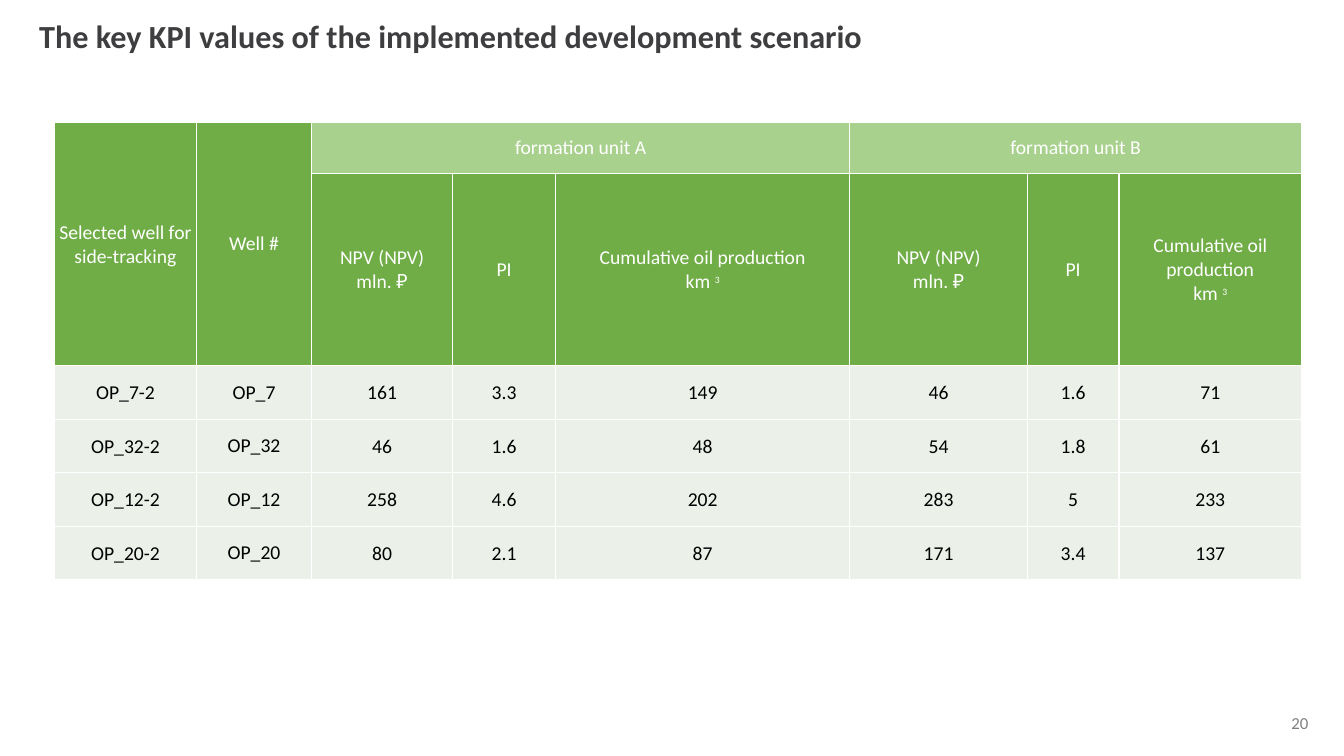
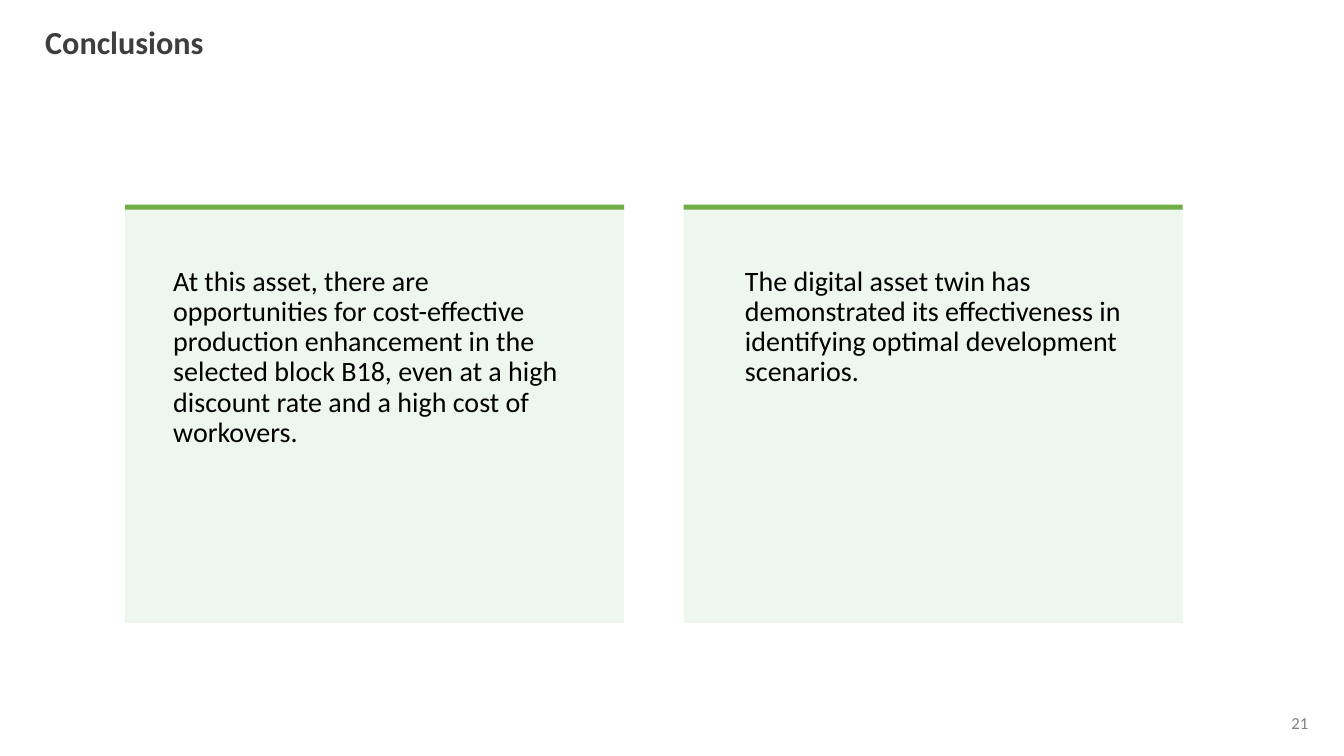
from lxml import etree
from pptx import Presentation
from pptx.dml.color import RGBColor
from pptx.enum.shapes import MSO_SHAPE
from pptx.enum.text import MSO_ANCHOR, PP_ALIGN
from pptx.oxml.ns import qn
from pptx.util import Pt

PX = 9144
FONT = "Calibri"
COLORS = {
    "title": "3E3E40",
    "number": "808080",
    "header": "70AD47",
    "unit": "A9D18E",
    "row": "EBF1E9",
    "card": "EDF7EE",
    "white": "FFFFFF",
    "black": "000000",
}


def style(font, size, color, bold=False):
    font.name = FONT
    font.size = Pt(size)
    font.bold = bold
    font.color.rgb = RGBColor.from_string(COLORS[color])


def add_text(slide, box, text, size, color, bold=False, wrap=True, anchor=MSO_ANCHOR.TOP):
    frame = slide.shapes.add_textbox(*[n * PX for n in box]).text_frame
    frame.word_wrap = wrap
    frame.vertical_anchor = anchor
    frame.text = text
    paragraph = frame.paragraphs[0]
    style(paragraph.runs[0].font, size, color, bold)
    return paragraph


prs = Presentation()
prs.slide_width, prs.slide_height = 1333 * PX, 750 * PX
blank = prs.slide_layouts[6]

slides = []
for number, title, title_box in [
    (20, "The key KPI values of the implemented development scenario", (29, 11, 932, 49)),
    (21, "Conclusions", (35, 14, 634, 55)),
]:
    slide = prs.slides.add_slide(blank)
    add_text(slide, title_box, title, 23, "title", bold=True, anchor=MSO_ANCHOR.MIDDLE)
    add_text(slide, (1271, 702, 37, 30), str(number), 12, "number", wrap=False)
    slides.append(slide)
kpi_slide, conclusions_slide = slides

col_widths = [141, 114, 140, 102, 292, 176, 91, 181]
row_heights = [51, 191, 53, 53, 53, 53]
measures = ["NPV (NPV)\nmln. ₽", "PI", "Cumulative oil production\nkm "]
kpi_rows = [
    ["Selected well for side-tracking", "Well #", "formation unit A", "", "", "formation unit B", "", ""],
    ["", "", *measures, *measures],
    ["OP_7-2", "OP_7", "161", "3.3", "149", "46", "1.6", "71"],
    ["OP_32-2", "OP_32", "46", "1.6", "48", "54", "1.8", "61"],
    ["OP_12-2", "OP_12", "258", "4.6", "202", "283", "5", "233"],
    ["OP_20-2", "OP_20", "80", "2.1", "87", "171", "3.4", "137"],
]
kpi_table = kpi_slide.shapes.add_table(
    len(row_heights), len(col_widths), 54 * PX, 121 * PX, sum(col_widths) * PX, sum(row_heights) * PX
).table
kpi_table.first_row = kpi_table.horz_banding = False
for column, width in zip(kpi_table.columns, col_widths):
    column.width = width * PX
for row, height in zip(kpi_table.rows, row_heights):
    row.height = height * PX

for r, values in enumerate(kpi_rows):
    for c, value in enumerate(values):
        cell = kpi_table.cell(r, c)
        props = cell._tc.get_or_add_tcPr()
        for side in ("a:lnL", "a:lnR", "a:lnT", "a:lnB"):
            border = etree.SubElement(props, qn(side), w=str(Pt(1)))
            fill = etree.SubElement(border, qn("a:solidFill"))
            etree.SubElement(fill, qn("a:srgbClr"), val=COLORS["white"])
        kind = "row" if r > 1 else "unit" if r == 0 and c > 1 else "header"
        cell.fill.solid()
        cell.fill.fore_color.rgb = RGBColor.from_string(COLORS[kind])
        cell.vertical_anchor = MSO_ANCHOR.MIDDLE
        insets = (7, 0, 7, 0) if c == 1 else (2, 2, 2, 1)
        cell.margin_left, cell.margin_top, cell.margin_right, cell.margin_bottom = [n * PX for n in insets]
        cell.text_frame.text = value
        text_color = "black" if r > 1 else "white"
        for paragraph in cell.text_frame.paragraphs:
            paragraph.alignment = PP_ALIGN.CENTER
            style(paragraph.font, 14, text_color)
            for run in paragraph.runs:
                style(run.font, 14, text_color)
            if paragraph.text == "km ":
                exponent = paragraph.add_run()
                exponent.text = "3"
                style(exponent.font, 12, text_color)
                exponent._r.get_or_add_rPr().set("baseline", "30000")

for first, last in [((0, 0), (1, 0)), ((0, 1), (1, 1)), ((0, 2), (0, 4)), ((0, 5), (0, 7))]:
    kpi_table.cell(*first).merge(kpi_table.cell(*last))

for card_left, text_box, conclusion in [
    (124, (162, 260, 424, 328),
     "At this asset, there are opportunities for cost-effective production enhancement in the "
     "selected block B18, even at a high discount rate and a high cost of workovers."),
    (678, (729, 260, 412, 180),
     "The digital asset twin has demonstrated its effectiveness in identifying optimal "
     "development scenarios."),
]:
    for top, height, color in [(204, 414, "card"), (203, 5, "header")]:
        panel = conclusions_slide.shapes.add_shape(
            MSO_SHAPE.RECTANGLE, card_left * PX, top * PX, 495 * PX, height * PX
        )
        panel.shadow.inherit = False
        panel.fill.solid()
        panel.fill.fore_color.rgb = RGBColor.from_string(COLORS[color])
        panel.line.fill.background()
    add_text(conclusions_slide, text_box, conclusion, 20, "black").line_spacing = 0.9

prs.save("out.pptx")
